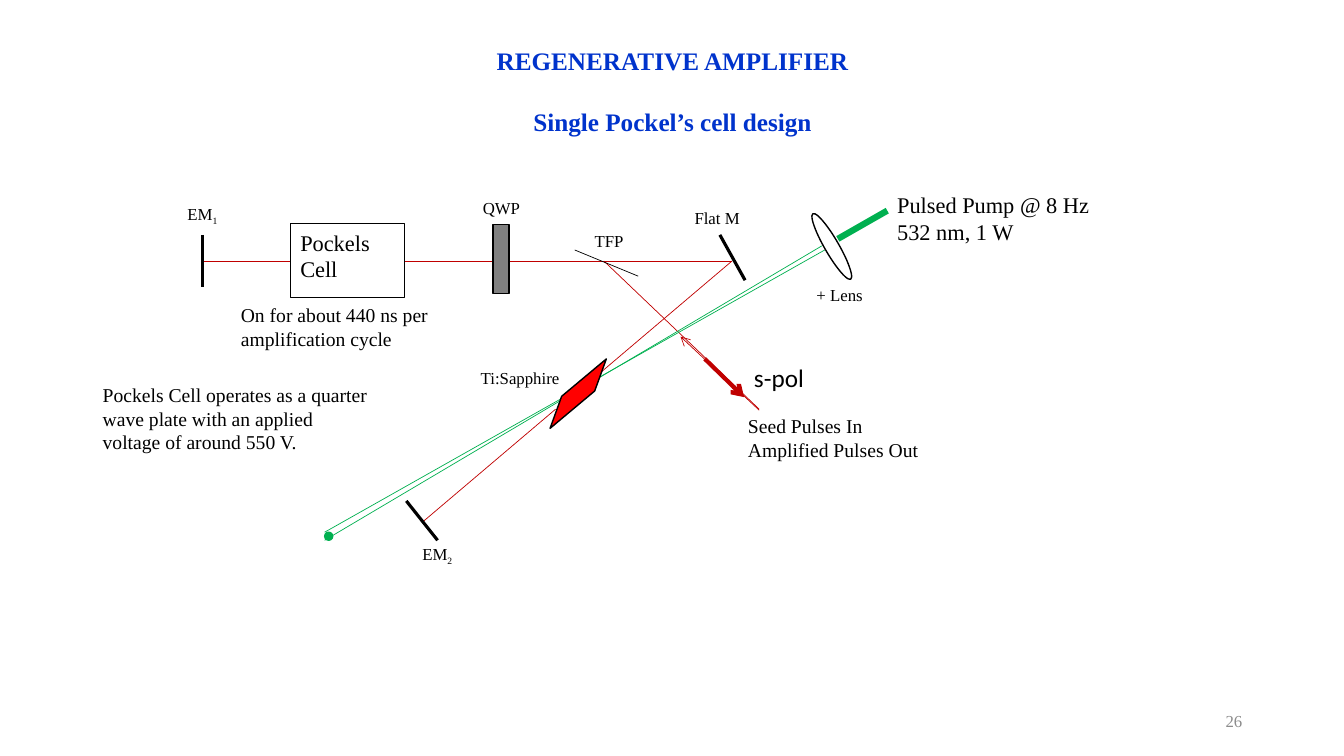
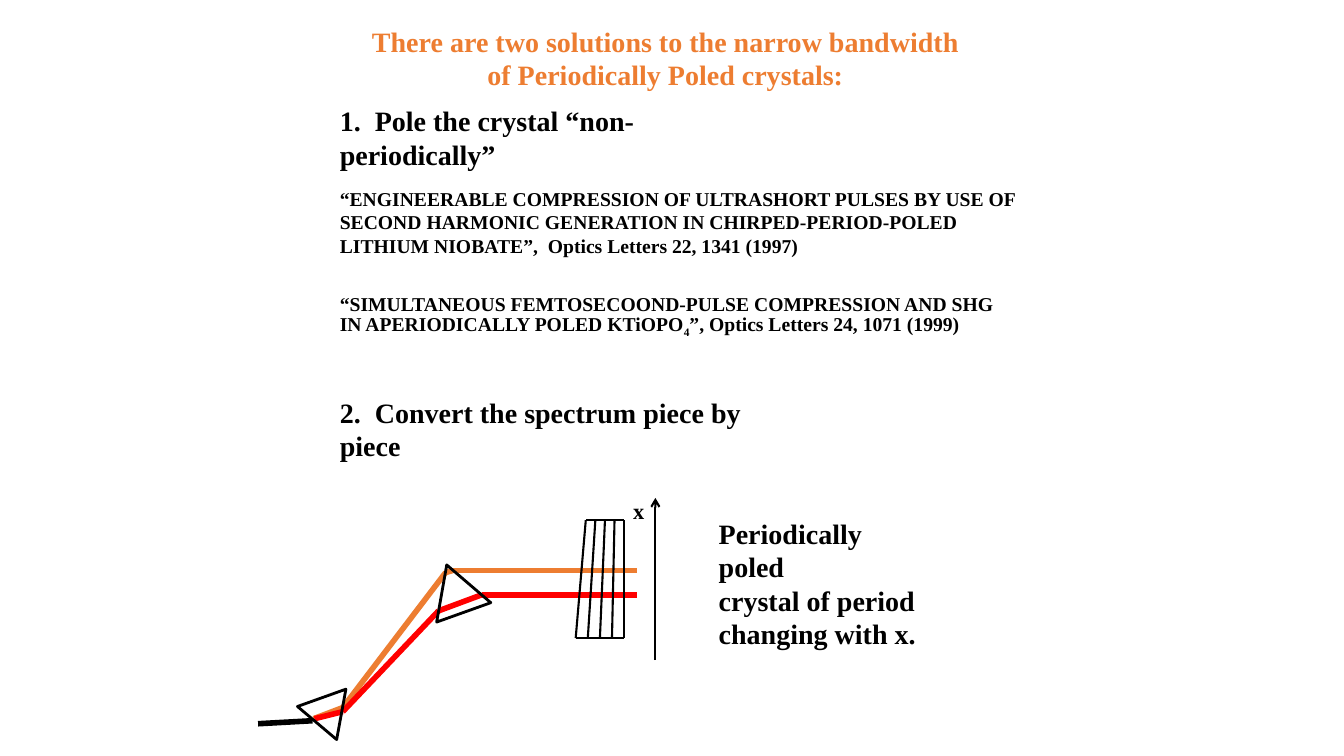
import dataclasses
import itertools

import pptx
import pptx.util
import pptx.dml.color
import pptx.enum.shapes
import pptx.enum.text
import pptx.oxml
import pptx.oxml.ns

SHAPE = pptx.enum.shapes.MSO_SHAPE
ALIGN = pptx.enum.text.PP_ALIGN
ANCHOR = pptx.enum.text.MSO_ANCHOR
Pt = pptx.util.Pt

COLORS = {
    "black": "000000",
    "white": "FFFFFF",
    "gray": "808080",
    "page": "8C8C8C",
    "blue": "0033CC",
    "orange": "ED7D31",
    "red": "FF0000",
    "beam": "C00000",
    "pump": "00B050",
}
FONT = "Times New Roman"
CELL = 0.1          # grid cell in inches, for columns and rows alike
LEADING = 1.2       # line height as a share of the text size


def cells(n):
    return pptx.util.Inches(round(n * CELL, 3))


def rgb(name):
    return pptx.dml.color.RGBColor.from_string(COLORS[name])


def add_xml(parent, tag, **attrs):
    el = pptx.oxml.parse_xml(f"<a:{tag} {pptx.oxml.ns.nsdecls('a')}/>")
    for key, value in attrs.items():
        el.set(key, value)
    parent.append(el)


# Text: "\v" breaks a line, "~" surrounds a subscript
def write(tf, paragraphs, size, color="black", bold=False, align=ALIGN.LEFT,
          font=FONT, gaps=(), anchor=ANCHOR.TOP):
    sizes = size if isinstance(size, (list, tuple)) else [size] * len(paragraphs)
    tf.word_wrap = True
    tf.auto_size = pptx.enum.text.MSO_AUTO_SIZE.NONE
    tf.vertical_anchor = anchor
    for i, (text, pt) in enumerate(zip(paragraphs, sizes)):
        p = tf.paragraphs[0] if i == 0 else tf.add_paragraph()
        first, *rest = text.split("~")
        p.text = first
        for j, piece in enumerate(rest):
            r = p.add_run()
            r.text = piece
            if j % 2 == 0:
                r._r.get_or_add_rPr().set("baseline", "-25000")
        p.alignment = align
        p.line_spacing = Pt(round(pt * LEADING, 1))
        p.space_before = Pt(gaps[i - 1] if i and gaps else 0)
        for r in p.runs:
            r.font.name = font
            r.font.size = Pt(pt)
            r.font.bold = bold
            r.font.color.rgb = rgb(color)


def place(shape, left, top, width, height):
    shape.left, shape.top = cells(left), cells(top)
    shape.width, shape.height = cells(width), cells(height)


@dataclasses.dataclass
class Region:
    """A part of a slide; positions count grid cells from its corner."""
    s: object
    left: float = 0
    top: float = 0

    def line(self, start, end, color="black", width=0.5, arrow=False):
        (x1, y1), (x2, y2) = start, end
        ln = self.s.shapes.add_connector(
            pptx.enum.shapes.MSO_CONNECTOR.STRAIGHT,
            cells(self.left + x1), cells(self.top + y1),
            cells(self.left + x2), cells(self.top + y2))
        ln.line.color.rgb = rgb(color)
        ln.line.width = Pt(width)
        if arrow:
            add_xml(ln.line._get_or_add_ln(), "tailEnd", type="arrow")
        add_xml(ln._element.spPr, "effectLst")

    def path_of(self, points, color, width):
        for start, end in itertools.pairwise(points):
            self.line(start, end, color, width)

    def shape(self, kind, box, fill=None, line="black", width=1, rotation=0):
        x, y, w, h = box
        sp = self.s.shapes.add_shape(
            kind, cells(self.left + x), cells(self.top + y), cells(w), cells(h))
        sp.shadow.inherit = False
        sp.rotation = rotation
        if fill:
            sp.fill.solid()
            sp.fill.fore_color.rgb = rgb(fill)
        else:
            sp.fill.background()
        sp.line.color.rgb = rgb(line)
        sp.line.width = Pt(width)
        return sp

    def text(self, box, paragraphs, size, **style):
        x, y, w, h = box
        tb = self.s.shapes.add_textbox(
            cells(self.left + x), cells(self.top + y), cells(w), cells(h))
        write(tb.text_frame, paragraphs, size, **style)


def new_slide(prs, layout, title, box, size, color, gaps=()):
    s = prs.slides.add_slide(prs.slide_layouts[layout])
    place(s.shapes.title, *box)
    write(s.shapes.title.text_frame, title, size, color, bold=True,
          align=ALIGN.CENTER, gaps=gaps)
    return s


def page_number(s, number):
    Region(s).text((94.2, 69.5, 30, 4), [number], 12, color="page",
                   align=ALIGN.RIGHT, anchor=ANCHOR.MIDDLE)


def amplifier(s, left, top):
    g = Region(s, left, top)
    axis = 7.9
    flat_hit, polarizer_hit = (55.6, axis), (42.9, axis)

    # Beams
    g.line((58.3, 22.6), polarizer_hit, "beam")
    g.line((58.3, 22.7), (50.5, 15.4), "beam", arrow=True)
    g.line((15.2, 35.6), (64.5, 6.4), "pump")
    g.line((15.2, 34.8), (64.8, 6.8), "pump")
    g.line((3.1, axis), flat_hit, "beam")
    g.line((42.4, 19.1), flat_hit, "beam")
    g.line((24.9, 33.8), (38.1, 22.6), "beam")
    g.line((66.1, 5.7), (71, 2.9), "pump", 4.5)
    g.line((52.9, 17.6), (56.8, 21.4), "beam", 3, arrow=True)

    # Mirrors and polarizer
    for start, end in [((3.1, 5.3), (3.1, 10.5)),
                       ((54.4, 5.3), (56.9, 9.8)),
                       ((23.3, 31.7), (26.4, 35.6))]:
        g.line(start, end, width=2.25)
    g.line((40, 6.8), (46.3, 9.4))

    # Optics
    g.shape(SHAPE.OVAL, (64.8, 2.7, 1.4, 7.5), rotation=330)
    g.shape(SHAPE.OVAL, (15.2, 34.8, 0.8, 0.8), "pump", "pump")
    g.shape(SHAPE.RECTANGLE, (31.9, 4.3, 1.6, 6.8), "gray")
    crystal = g.shape(SHAPE.PARALLELOGRAM, (36, 20.2, 8.7, 1.7), "red",
                      rotation=320.1)
    crystal.adjustments[0] = 1.72
    cell = g.shape(SHAPE.RECTANGLE, (11.8, 4.2, 11.3, 7.3), "white", width=0.5)
    write(cell.text_frame, ["Pockels Cell"], 16)

    # Labels
    for x, y, label in [(0.6, 2, "EM~1~"), (29.9, 1.1, "QWP"),
                        (41, 4.4, "TFP"), (50.9, 2.1, "Flat M"),
                        (63, 9.8, "+ Lens"), (29.7, 18, "Ti:Sapphire"),
                        (23.9, 35.7, "EM~2~")]:
        g.text((x, y, 12, 5), [label], 12)
    g.text((71, 0.5, 24, 6), ["Pulsed Pump @ 8 Hz", "532 nm, 1 W"], 16)
    g.text((56.2, 22.6, 25.7, 8), ["Seed Pulses In", "Amplified Pulses Out"], 14)
    g.text((56.8, 17.5, 9, 4), ["s-pol"], 18, font="Calibri")


def operating_notes(s, left, top):
    g = Region(s, left, top)
    g.text((13.7, 0, 25.2, 5.7),
           ["On for about 440 ns per amplification cycle"], 14)
    g.text((0, 7.9, 28.4, 8),
           ["Pockels Cell operates as a quarter wave plate with an applied "
            "voltage of around 550 V."], 14)


def solutions(s, left, top):
    body = s.placeholders[1]
    place(body, left, top, 72, 37)
    write(body.text_frame, [
        "1.  Pole the crystal “non-\vperiodically”",
        "“ENGINEERABLE COMPRESSION OF ULTRASHORT PULSES BY USE OF\v"
        "SECOND HARMONIC GENERATION IN CHIRPED-PERIOD-POLED\v"
        "LITHIUM NIOBATE”,  Optics Letters 22, 1341 (1997)",
        "“SIMULTANEOUS FEMTOSECOOND-PULSE COMPRESSION AND SHG\v"
        "IN APERIODICALLY POLED KTiOPO~4~”, Optics Letters 24, 1071 (1999)",
        "2.  Convert the spectrum piece by\vpiece",
    ], [20, 14, 14, 20], bold=True, gaps=(11, 25, 40))
    for p in body.text_frame.paragraphs:
        pPr = p._p.get_or_add_pPr()
        pPr.set("marL", "0")
        pPr.set("indent", "0")
        add_xml(pPr, "buNone")


def spectrum_converter(s, left, top):
    g = Region(s, left, top)

    # Rays
    g.line((0.6, 23.8), (6, 23.5), width=4)
    g.path_of([(6.1, 23.3), (9, 22.2), (19.2, 8.8), (19.9, 8.6), (38.2, 8.6)],
              "orange", 4)
    g.path_of([(6.2, 23.3), (9, 22.6), (18.5, 12.6), (22.8, 11), (38.2, 11)],
              "red", 4)

    # Prisms
    for box, rotation in [((5.1, 21.1, 5.1, 4.4), 160.3),
                          ((17.3, 7.9, 5.7, 5), 340.3)]:
        g.shape(SHAPE.ISOSCELES_TRIANGLE, box, width=2, rotation=rotation)

    # Poled crystal: domains narrow towards the top
    right, upper, lower, domains = 36.9, 3.6, 15.3, 4
    wide, narrow = 1.2, 0.95
    for i in range(domains + 1):
        g.line((right - i * wide, lower), (right - i * narrow, upper), width=1.5)
    g.line((right - domains * wide, lower), (right, lower), width=1.5)
    g.line((right - domains * narrow, upper), (right, upper), width=1.5)

    # Axis and caption
    g.line((40, 17.5), (40, 1.4), width=1.5, arrow=True)
    g.text((36.8, 0.8, 3.1, 3.7), ["x"], 16, bold=True)
    g.text((45.3, 2.7, 23.4, 14.4),
           ["Periodically\vpoled", "crystal of period", "changing with x."],
           20, bold=True)


def main():
    prs = pptx.Presentation()
    prs.slide_width = pptx.util.Inches(13.33)
    prs.slide_height = pptx.util.Inches(7.5)

    s = new_slide(prs, 5, ["REGENERATIVE AMPLIFIER", "Single Pockel’s cell design"],
                  (46.7, 4, 40, 10), 18, "blue", gaps=(22,))
    amplifier(s, 17, 18)
    operating_notes(s, 9.2, 29.6)
    page_number(s, "26")

    s = new_slide(prs, 1, ["There are two solutions to the narrow bandwidth",
                           "of Periodically Poled crystals:"],
                  (34, 1.9, 64, 7.7), 20, "orange")
    solutions(s, 32.7, 9.8)
    spectrum_converter(s, 25, 48)

    prs.save("out.pptx")


if __name__ == "__main__":
    main()
